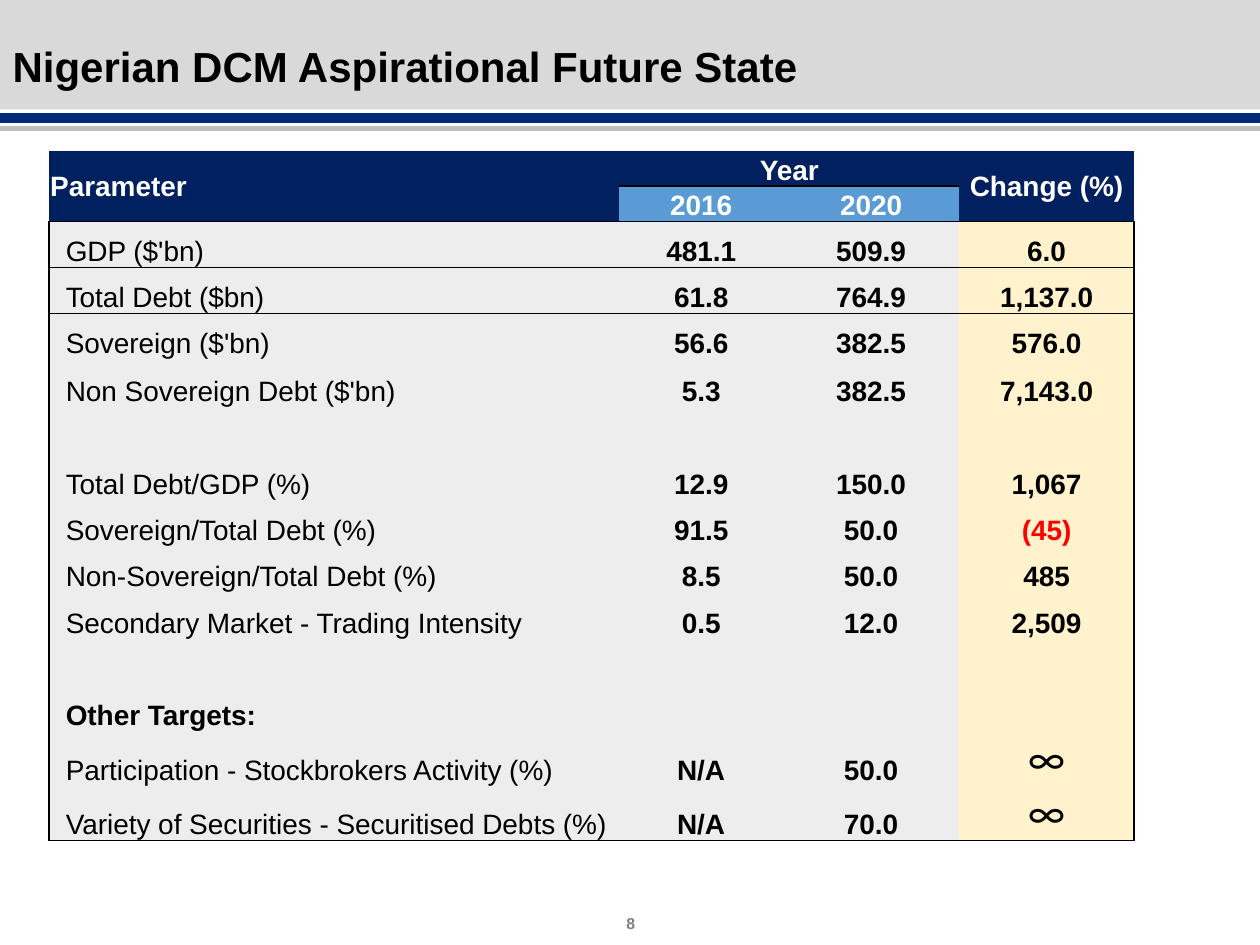
from dataclasses import dataclass
from typing import Any, NamedTuple

from lxml.etree import SubElement
from pptx import Presentation
from pptx.dml.color import RGBColor
from pptx.enum.shapes import MSO_SHAPE
from pptx.enum.text import MSO_ANCHOR, PP_ALIGN
from pptx.oxml.ns import qn
from pptx.util import Pt


@dataclass(frozen=True)
class Theme:
    font: str = "Arial"
    symbol_font: str = "Calibri"
    title_size: float = 24
    table_size: float = 16
    symbol_size: float = 25
    number_size: float = 9
    black: str = "000000"
    white: str = "FFFFFF"
    red: str = "FF0000"
    grey_text: str = "7F7F7F"
    banner: str = "D9D9D9"
    rule_grey: str = "BFBFBF"
    rule_blue: str = "00297A"
    header: str = "002060"
    year: str = "5B9BD5"
    body: str = "EDEDED"
    change: str = "FFF2CC"


class Band(NamedTuple):
    top: float
    width: float
    height: float
    color: str


class Target(NamedTuple):
    label: str = ""
    base: str = ""
    goal: str = ""
    change: str = ""
    height: float = 26.4


THEME = Theme()
NO_STYLE_GRID = "{2D5ABB26-0587-4C30-8999-92F81FD0307C}"
SECTION_HEADING = "Other Targets:"
INFINITY = "∞"
HEADER_HEIGHT = 20.1
COLUMN_WIDTHS = (326, 93.4, 100.8, 99.8)
HEADERS = (("Parameter", "Year", "", "Change (%)"), ("", "2016", "2020", ""))

BANDS = (
    Band(0, 720, 62.6, THEME.banner),
    Band(72, 721.4, 2.9, THEME.rule_grey),
    Band(64.6, 721.4, 5.6, THEME.rule_blue),
)

TARGETS = (
    Target("GDP ($'bn)", "481.1", "509.9", "6.0"),
    Target("Total Debt ($bn)", "61.8", "764.9", "1,137.0"),
    Target("Sovereign ($'bn)", "56.6", "382.5", "576.0"),
    Target("Non Sovereign Debt ($'bn)", "5.3", "382.5", "7,143.0", 27),
    Target(height=27),
    Target("Total Debt/GDP (%)", "12.9", "150.0", "1,067"),
    Target("Sovereign/Total Debt (%)", "91.5", "50.0", "(45)"),
    Target("Non-Sovereign/Total Debt (%)", "8.5", "50.0", "485"),
    Target("Secondary Market - Trading Intensity", "0.5", "12.0", "2,509"),
    Target(),
    Target(SECTION_HEADING),
    Target("Participation - Stockbrokers Activity (%)", "N/A", "50.0", INFINITY, 31),
    Target("Variety of Securities - Securitised Debts (%)", "N/A", "70.0", INFINITY, 31),
)


def apply(target: Any, values: dict[str, Any]) -> None:
    for name, value in values.items():
        setattr(target, name, value)


def write(frame: Any, text: str, size: float, color: str, bold: bool = True,
          align: PP_ALIGN = PP_ALIGN.CENTER, font: str = THEME.font) -> None:
    paragraph = frame.paragraphs[0]
    paragraph.alignment = align
    run = paragraph.add_run()
    run.text = text
    apply(run.font, {"name": font, "size": Pt(size), "bold": bold})
    run.font.color.rgb = RGBColor.from_string(color)


def draw_band(slide: Any, band: Band) -> None:
    bar = slide.shapes.add_shape(
        MSO_SHAPE.RECTANGLE, 0, Pt(band.top), Pt(band.width), Pt(band.height))
    bar.shadow.inherit = False
    bar.fill.solid()
    bar.fill.fore_color.rgb = RGBColor.from_string(band.color)
    bar.line.fill.background()


def draw_title(slide: Any, text: str) -> None:
    title = slide.shapes.title
    apply(title, {"left": 0, "top": Pt(8), "width": Pt(720), "height": Pt(55)})
    apply(title.text_frame, {"vertical_anchor": MSO_ANCHOR.MIDDLE, "word_wrap": True})
    write(title.text_frame, text, THEME.title_size, THEME.black, align=PP_ALIGN.LEFT)
    title.text_frame.paragraphs[0].line_spacing = 1.15
    slide.shapes._spTree.append(title._element)


def draw_page_number(slide: Any, number: str) -> None:
    page = slide.shapes.add_textbox(Pt(279.4), Pt(516.2), Pt(162), Pt(23))
    apply(page.text_frame, {"vertical_anchor": MSO_ANCHOR.MIDDLE, "word_wrap": True})
    write(page.text_frame, number, THEME.number_size, THEME.grey_text)


def edges(row: int, column: int, last_row: int) -> list[str]:
    def ruled_below(index: int) -> bool:
        return index in (1, 2, last_row) or (index == 0 and column in (1, 2))

    in_body = row >= len(HEADERS)
    present = {
        "lnL": in_body and column == 0,
        "lnR": in_body and column == len(COLUMN_WIDTHS) - 1,
        "lnT": row > 0 and ruled_below(row - 1),
        "lnB": ruled_below(row),
    }
    return [edge for edge, shown in present.items() if shown]


def format_cell(cell: Any, fill: str, anchor: MSO_ANCHOR, borders: list[str],
                indent: float = 0.7) -> None:
    apply(cell, {"margin_left": Pt(indent), "margin_right": Pt(0.7),
                 "margin_top": Pt(0.7), "margin_bottom": 0, "vertical_anchor": anchor})
    properties = cell._tc.get_or_add_tcPr()
    for edge in borders:
        line = SubElement(properties, qn(f"a:{edge}"), w=str(Pt(1)))
        paint = SubElement(line, qn("a:solidFill"))
        SubElement(paint, qn("a:srgbClr"), val=THEME.black)
    cell.fill.solid()
    cell.fill.fore_color.rgb = RGBColor.from_string(fill)


def fill_header(table: Any, last_row: int) -> None:
    for row, headings in enumerate(HEADERS):
        for column, heading in enumerate(headings):
            cell = table.cell(row, column)
            year_column = column in (1, 2)
            fill = THEME.year if row == 1 and year_column else THEME.header
            anchor = MSO_ANCHOR.BOTTOM if year_column else MSO_ANCHOR.MIDDLE
            format_cell(cell, fill, anchor, edges(row, column, last_row))
            if heading:
                align = PP_ALIGN.CENTER if column else PP_ALIGN.LEFT
                write(cell.text_frame, heading, THEME.table_size, THEME.white, align=align)
    for start, end in (((0, 0), (1, 0)), ((0, 1), (0, 2)), ((0, 3), (1, 3))):
        table.cell(*start).merge(table.cell(*end))


def fill_target(table: Any, row: int, target: Target, last_row: int) -> None:
    for column, value in enumerate(target[:4]):
        cell = table.cell(row, column)
        fill = THEME.change if column == 3 else THEME.body
        indent = 0.7 if column else 9.6
        format_cell(cell, fill, MSO_ANCHOR.BOTTOM, edges(row, column, last_row), indent)
        if value == INFINITY:
            write(cell.text_frame, value, THEME.symbol_size, THEME.black, False,
                  font=THEME.symbol_font)
        elif value:
            color = THEME.red if value.startswith("(") else THEME.black
            bold = column > 0 or value == SECTION_HEADING
            align = PP_ALIGN.CENTER if column else PP_ALIGN.LEFT
            write(cell.text_frame, value, THEME.table_size, color, bold, align)


def draw_targets(slide: Any) -> None:
    heights = [HEADER_HEIGHT] * len(HEADERS) + [target.height for target in TARGETS]
    last_row = len(heights) - 1
    table = slide.shapes.add_table(
        len(heights), len(COLUMN_WIDTHS), Pt(28), Pt(86.3),
        Pt(sum(COLUMN_WIDTHS)), Pt(sum(heights))).table
    apply(table, {"first_row": False, "horz_banding": False})
    table._tbl.tblPr.find(qn("a:tableStyleId")).text = NO_STYLE_GRID
    for column, width in zip(table.columns, COLUMN_WIDTHS):
        column.width = Pt(width)
    for row, height in zip(table.rows, heights):
        row.height = Pt(height)
    fill_header(table, last_row)
    for row, target in enumerate(TARGETS, len(HEADERS)):
        fill_target(table, row, target, last_row)


def main() -> None:
    deck = Presentation()
    apply(deck, {"slide_width": Pt(720), "slide_height": Pt(540)})
    slide = deck.slides.add_slide(deck.slide_layouts[5])
    draw_page_number(slide, "8")
    for band in BANDS:
        draw_band(slide, band)
    draw_title(slide, "Nigerian DCM Aspirational Future State")
    draw_targets(slide)
    deck.save("out.pptx")


if __name__ == "__main__":
    main()
